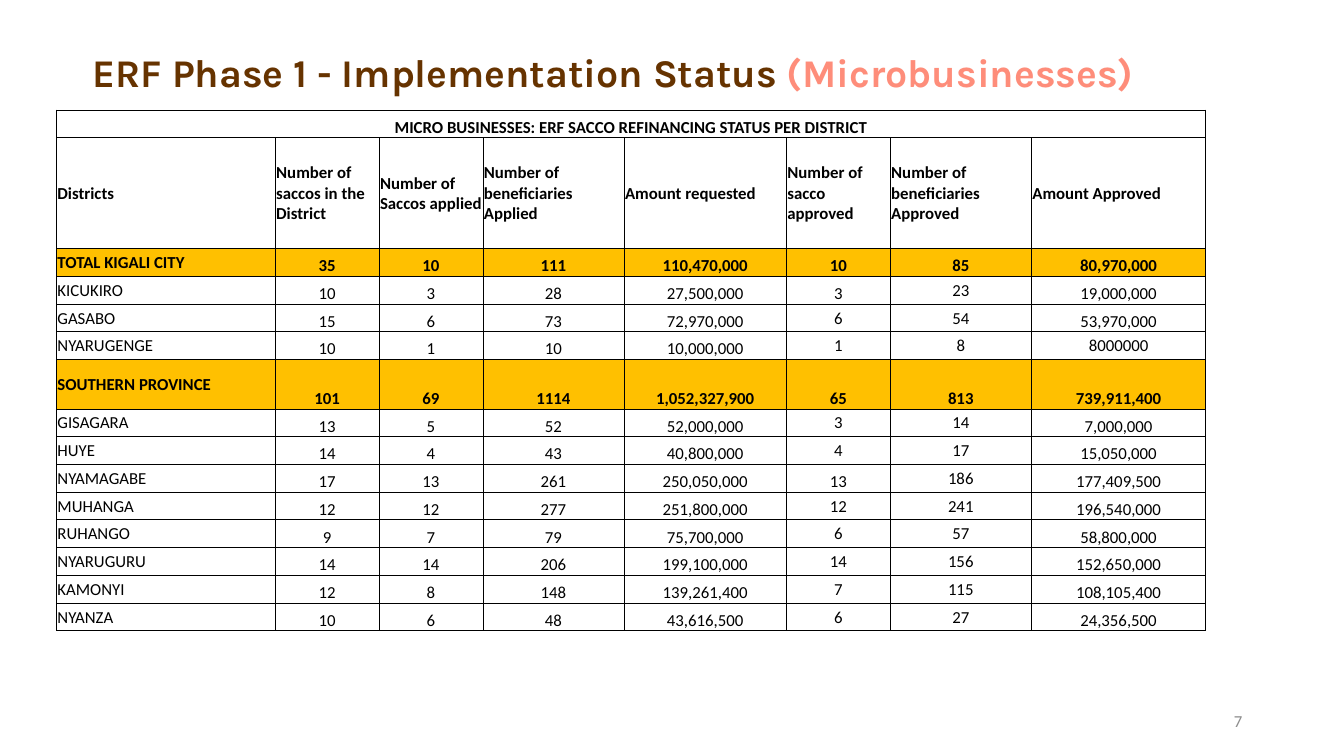
from dataclasses import dataclass

from lxml.etree import SubElement
from pptx import Presentation
from pptx.dml.color import RGBColor
from pptx.enum.text import MSO_ANCHOR, MSO_AUTO_SIZE, PP_ALIGN
from pptx.oxml.ns import qn
from pptx.util import Inches, Pt


@dataclass(frozen=True)
class Theme:
    heading_font: str = "Karla"
    body_font: str = "Calibri"
    heading_size: int = 28
    body_size: int = 12
    heading: str = "663300"
    accent: str = "FE8D7A"
    ink: str = "000000"
    muted: str = "8C8C8C"
    highlight: str = "FFC000"
    border_width: float = 0.5


CAPTION = "MICRO BUSINESSES: ERF SACCO REFINANCING STATUS PER DISTRICT"
HEADERS = (
    "Districts", "Number of saccos in the District", "Number of Saccos applied",
    "Number of beneficiaries Applied", "Amount requested",
    "Number of sacco approved", "Number of beneficiaries Approved",
    "Amount Approved",
)
KIGALI, SOUTHERN = "TOTAL KIGALI CITY", "SOUTHERN PROVINCE"
AREAS = (
    (KIGALI, "35", "10", "111", "110,470,000", "10", "85", "80,970,000"),
    ("KICUKIRO", "10", "3", "28", "27,500,000", "3", "23", "19,000,000"),
    ("GASABO", "15", "6", "73", "72,970,000", "6", "54", "53,970,000"),
    ("NYARUGENGE", "10", "1", "10", "10,000,000", "1", "8", "8000000"),
    (SOUTHERN, "101", "69", "1114", "1,052,327,900", "65", "813", "739,911,400"),
    ("GISAGARA", "13", "5", "52", "52,000,000", "3", "14", "7,000,000"),
    ("HUYE", "14", "4", "43", "40,800,000", "4", "17", "15,050,000"),
    ("NYAMAGABE", "17", "13", "261", "250,050,000", "13", "186", "177,409,500"),
    ("MUHANGA", "12", "12", "277", "251,800,000", "12", "241", "196,540,000"),
    ("RUHANGO", "9", "7", "79", "75,700,000", "6", "57", "58,800,000"),
    ("NYARUGURU", "14", "14", "206", "199,100,000", "14", "156", "152,650,000"),
    ("KAMONYI", "12", "8", "148", "139,261,400", "7", "115", "108,105,400"),
    ("NYANZA", "10", "6", "48", "43,616,500", "6", "27", "24,356,500"),
)
TOTALS = {KIGALI, SOUTHERN}
COLUMN_WIDTHS = (2.17, 1.03, 1.03, 1.4, 1.61, 1.03, 1.4, 1.73)
TABLE_HEIGHT, HEADER_HEIGHT, SOUTHERN_HEIGHT = 5.17, 1.1, 0.49
SACCOS_APPROVED, BENEFICIARIES_APPROVED, AMOUNT_APPROVED = 5, 6, 7
LOW_SACCOS_APPROVED = {"KICUKIRO", "NYAMAGABE"}


def figure_anchor(area, column):
    """Figures sit low, except most approved counts and one approved amount."""
    centred = area not in TOTALS and (
        column == BENEFICIARIES_APPROVED
        or (column == SACCOS_APPROVED and area not in LOW_SACCOS_APPROVED)
        or (column == AMOUNT_APPROVED and area == "NYARUGENGE")
    )
    return MSO_ANCHOR.MIDDLE if centred else MSO_ANCHOR.BOTTOM


class StatusSlide:
    def __init__(self, presentation, theme):
        self.theme = theme
        self.slide = presentation.slides.add_slide(presentation.slide_layouts[5])

    def add_run(self, paragraph, text, color, size, font, bold=False):
        run = paragraph.add_run()
        run.text = text
        run.font.name = font
        run.font.size = Pt(size)
        run.font.bold = bold
        run.font.color.rgb = RGBColor.from_string(color)

    def set_title(self, *parts):
        title = self.slide.shapes.title
        title.left, title.top = Inches(0.82), Inches(0.4)
        title.width, title.height = Inches(11.7), Inches(0.69)
        frame = title.text_frame
        frame.auto_size = MSO_AUTO_SIZE.NONE
        frame.vertical_anchor = MSO_ANCHOR.MIDDLE
        paragraph = frame.paragraphs[0]
        paragraph.alignment = PP_ALIGN.LEFT
        paragraph.line_spacing = 0.9
        for text, color in parts:
            self.add_run(paragraph, text, color, self.theme.heading_size,
                         self.theme.heading_font, bold=True)

    def add_page_number(self, number):
        box = self.slide.shapes.add_textbox(
            Inches(9.42), Inches(6.95), Inches(3), Inches(0.4))
        frame = box.text_frame
        frame.word_wrap = True
        frame.vertical_anchor = MSO_ANCHOR.MIDDLE
        paragraph = frame.paragraphs[0]
        paragraph.alignment = PP_ALIGN.RIGHT
        self.add_run(paragraph, number, self.theme.muted,
                     self.theme.body_size, self.theme.body_font)

    def outline_cell(self, cell):
        properties = cell._tc.get_or_add_tcPr()
        for side in ("a:lnL", "a:lnR", "a:lnT", "a:lnB"):
            line = SubElement(properties, qn(side),
                              w=str(Pt(self.theme.border_width)))
            fill = SubElement(line, qn("a:solidFill"))
            SubElement(fill, qn("a:srgbClr"), val=self.theme.ink)

    def format_cell(self, cell, highlighted=False):
        self.outline_cell(cell)
        if highlighted:
            cell.fill.solid()
            cell.fill.fore_color.rgb = RGBColor.from_string(self.theme.highlight)
        else:
            cell.fill.background()
        cell.margin_left = cell.margin_right = cell.margin_top = Inches(0.01)
        cell.margin_bottom = 0

    def write_cell(self, cell, text, anchor, alignment, bold):
        cell.vertical_anchor = anchor
        paragraph = cell.text_frame.paragraphs[0]
        paragraph.alignment = alignment
        self.add_run(paragraph, text, self.theme.ink, self.theme.body_size,
                     self.theme.body_font, bold)

    def add_status_table(self):
        table = self.slide.shapes.add_table(
            len(AREAS) + 2, len(HEADERS), Inches(0.56), Inches(1.09),
            Inches(sum(COLUMN_WIDTHS)), Inches(TABLE_HEIGHT)).table
        table.first_row = table.horz_banding = False
        for column, width in zip(table.columns, COLUMN_WIDTHS):
            column.width = Inches(width)

        row_names = ["caption", "header"] + [area[0] for area in AREAS]
        special = {"header": HEADER_HEIGHT, SOUTHERN: SOUTHERN_HEIGHT}
        regular = ((TABLE_HEIGHT - sum(special.values()))
                   / (len(row_names) - len(special)))
        for row, name in zip(table.rows, row_names):
            row.height = Inches(special.get(name, regular))
            for cell in row.cells:
                self.format_cell(cell, highlighted=name in TOTALS)

        caption = table.cell(0, 0)
        caption.merge(table.cell(0, len(HEADERS) - 1))
        self.write_cell(caption, CAPTION, MSO_ANCHOR.BOTTOM, PP_ALIGN.CENTER, True)
        for column, header in enumerate(HEADERS):
            self.write_cell(table.cell(1, column), header,
                            MSO_ANCHOR.MIDDLE, PP_ALIGN.LEFT, True)
        for row, (area, *figures) in enumerate(AREAS, start=2):
            bold = area in TOTALS
            self.write_cell(table.cell(row, 0), area,
                            MSO_ANCHOR.MIDDLE, PP_ALIGN.LEFT, bold)
            for column, figure in enumerate(figures, start=1):
                self.write_cell(table.cell(row, column), figure,
                                figure_anchor(area, column), PP_ALIGN.CENTER, bold)


def main():
    presentation = Presentation()
    presentation.slide_width = Inches(13.33)
    presentation.slide_height = Inches(7.5)
    theme = Theme()
    status = StatusSlide(presentation, theme)
    status.set_title(("ERF Phase 1 - Implementation Status ", theme.heading),
                     ("(Microbusinesses)", theme.accent))
    status.add_page_number("7")
    status.add_status_table()
    presentation.save("out.pptx")


if __name__ == "__main__":
    main()
